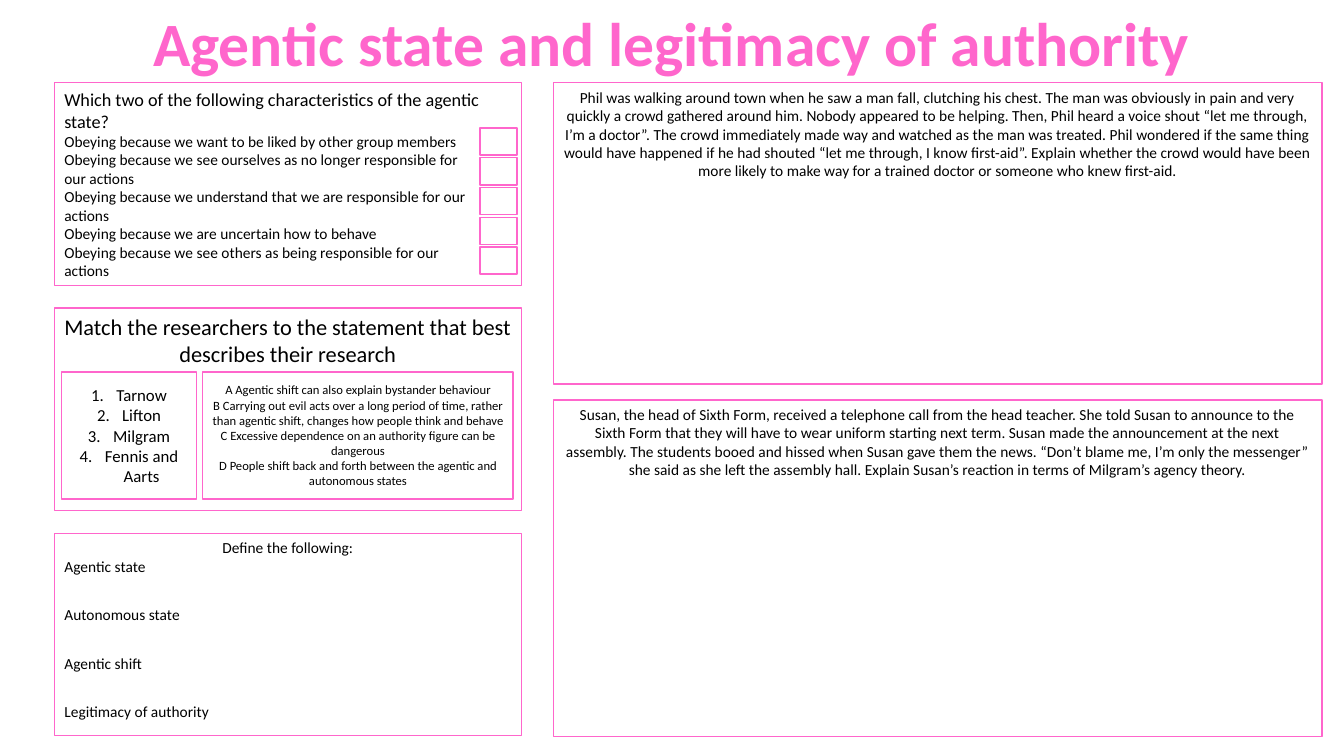
from dataclasses import dataclass

from lxml.etree import SubElement
from pptx import Presentation
from pptx.dml.color import RGBColor
from pptx.enum.shapes import MSO_SHAPE
from pptx.enum.text import MSO_ANCHOR, PP_ALIGN
from pptx.oxml.ns import qn
from pptx.slide import Slide
from pptx.text.text import TextFrame, _Paragraph
from pptx.util import Inches, Pt


@dataclass(frozen=True)
class Theme:
    font: str = "Calibri"
    pink: RGBColor = RGBColor(0xFF, 0x66, 0xCC)
    white: RGBColor = RGBColor(0xFF, 0xFF, 0xFF)
    black: RGBColor = RGBColor(0, 0, 0)
    title: float = 44
    task: float = 16
    query: float = 13
    names: float = 12
    body: float = 11
    small: float = 9
    line: float = 1


THEME = Theme()
LEFT, CENTER = PP_ALIGN.LEFT, PP_ALIGN.CENTER
TOP, MIDDLE = MSO_ANCHOR.TOP, MSO_ANCHOR.MIDDLE


@dataclass(frozen=True)
class Line:
    text: str
    size: float = THEME.body
    align: PP_ALIGN = CENTER
    before: float = 0
    listed: bool = False


@dataclass(frozen=True)
class Box:
    left: float
    top: float
    width: float
    height: float
    lines: tuple[Line, ...] = ()
    anchor: MSO_ANCHOR = TOP
    inset: float = 0.1


def spread(first: float, last: float, count: int) -> list[float]:
    """Give evenly spaced places from first to last."""
    step = (last - first) / (count - 1)
    return [first + step * i for i in range(count)]


def number(para: _Paragraph) -> None:
    """Turn a paragraph into a numbered item with a hanging indent."""
    props = para._p.get_or_add_pPr()
    props.set("marL", str(Inches(0.25)))
    props.set("indent", str(-Inches(0.25)))
    SubElement(props, qn("a:buFont"), typeface="+mj-lt")
    SubElement(props, qn("a:buAutoNum"), type="arabicPeriod")


def write(frame: TextFrame, lines: tuple[Line, ...], color: RGBColor, bold: bool = False) -> None:
    for i, line in enumerate(lines):
        para = frame.paragraphs[0] if i == 0 else frame.add_paragraph()
        para.alignment = line.align
        if line.before:
            para.space_before = Pt(line.before)
        if line.listed:
            number(para)
        run = para.add_run()
        run.text = line.text
        style = {"name": THEME.font, "size": Pt(line.size), "bold": bold}
        for key, value in style.items():
            setattr(run.font, key, value)
        run.font.color.rgb = color


def draw(slide: Slide, box: Box) -> None:
    place = map(Inches, (box.left, box.top, box.width, box.height))
    shape = slide.shapes.add_shape(MSO_SHAPE.RECTANGLE, *place)
    shape.shadow.inherit = False
    shape.fill.solid()
    shape.fill.fore_color.rgb = THEME.white
    shape.line.color.rgb = THEME.pink
    shape.line.width = Pt(THEME.line)
    frame = shape.text_frame
    layout = {"word_wrap": True, "vertical_anchor": box.anchor, "margin_right": Inches(box.inset)}
    for key, value in layout.items():
        setattr(frame, key, value)
    write(frame, box.lines, THEME.black)


TITLE = Line("Agentic state and legitimacy of authority", THEME.title)
QUERY = Line("Which two of the following characteristics of the agentic state?", THEME.query, LEFT)
CHOICES = (
    "Obeying because we want to be liked by other group members",
    "Obeying because we see ourselves as no longer responsible for our actions",
    "Obeying because we understand that we are responsible for our actions",
    "Obeying because we are uncertain how to behave",
    "Obeying because we see others as being responsible for our actions",
)
TASK = Line("Match the researchers to the statement that best describes their research", THEME.task)
NAMES = ("Tarnow", "Lifton", "Milgram", "Fennis and Aarts")
CLAIMS = (
    "A Agentic shift can also explain bystander behaviour",
    "B Carrying out evil acts over a long period of time, rather than agentic shift, "
    "changes how people think and behave",
    "C Excessive dependence on an authority figure can be dangerous",
    "D People shift back and forth between the agentic and autonomous states",
)
TERMS = ("Agentic state", "Autonomous state", "Agentic shift", "Legitimacy of authority")
PHIL = Line(
    "Phil was walking around town when he saw a man fall, clutching his chest. The man was "
    "obviously in pain and very quickly a crowd gathered around him. Nobody appeared to be "
    "helping. Then, Phil heard a voice shout “let me through, I’m a doctor”. The crowd "
    "immediately made way and watched as the man was treated. Phil wondered if the same thing "
    "would have happened if he had shouted “let me through, I know first-aid”. Explain whether "
    "the crowd would have been more likely to make way for a trained doctor or someone who "
    "knew first-aid."
)
SUSAN = Line(
    "Susan, the head of Sixth Form, received a telephone call from the head teacher. She told "
    "Susan to announce to the Sixth Form that they will have to wear uniform starting next "
    "term. Susan made the announcement at the next assembly. The students booed and hissed "
    "when Susan gave them the news. “Don’t blame me, I’m only the messenger” she said as she "
    "left the assembly hall. Explain Susan’s reaction in terms of Milgram’s agency theory."
)


def build() -> list[Box]:
    query = (QUERY, *(Line(text, align=LEFT) for text in CHOICES))
    define = (
        Line("Define the following:"),
        *(Line(text, align=LEFT, before=21.5 if i else 0) for i, text in enumerate(TERMS)),
    )
    names = tuple(Line(text, THEME.names, listed=True) for text in NAMES)
    claims = tuple(Line(text, THEME.small) for text in CLAIMS)
    panels = ((query, MIDDLE, 0.4), ((TASK,), TOP, 0.1), (define, TOP, 0.1))
    tops = spread(0.82, 5.29, len(panels))
    return [
        *(Box(0.54, top, 4.63, 2.01, *panel) for top, panel in zip(tops, panels)),
        Box(5.49, 0.82, 7.62, 2.99, (PHIL,)),
        Box(5.49, 3.97, 7.62, 3.34, (SUSAN,)),
        *(Box(4.76, top, 0.37, 0.27) for top in spread(1.27, 2.45, len(CHOICES))),
        Box(0.61, 3.69, 1.34, 1.26, names, MIDDLE),
        Box(2.01, 3.69, 3.08, 1.26, claims, MIDDLE),
    ]


def main() -> None:
    deck = Presentation()
    deck.slide_width, deck.slide_height = Inches(13.33), Inches(7.5)
    slide = deck.slides.add_slide(deck.slide_layouts[6])
    for box in build():
        draw(slide, box)
    title = slide.shapes.add_textbox(0, 0, deck.slide_width, Inches(0.84))
    title.text_frame.word_wrap = True
    write(title.text_frame, (TITLE,), THEME.pink, bold=True)
    deck.save("out.pptx")


if __name__ == "__main__":
    main()
